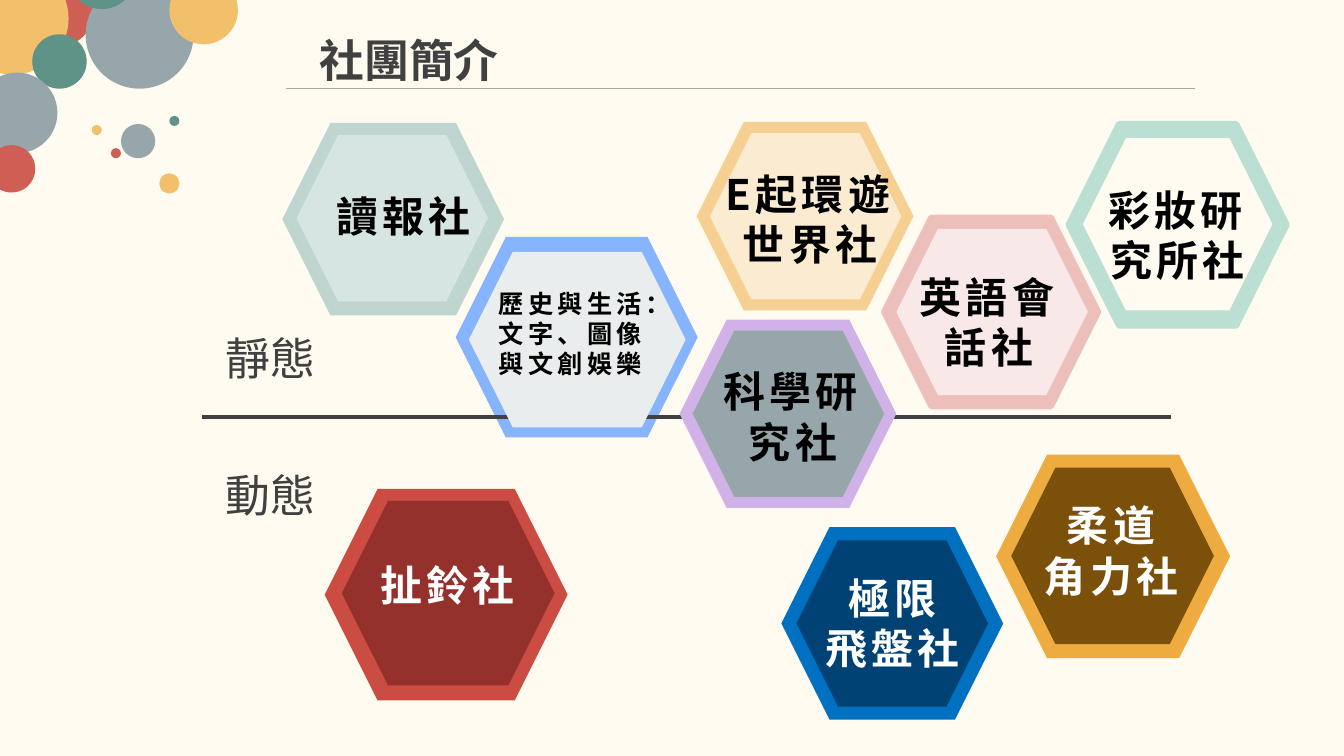
"""Build the school club overview slide."""
from dataclasses import dataclass
from typing import Optional

from lxml.etree import SubElement
from pptx import Presentation
from pptx.dml.color import RGBColor as RGB
from pptx.enum.shapes import MSO_CONNECTOR as CONN, MSO_SHAPE as SHAPE
from pptx.enum.text import MSO_AUTO_SIZE as FIT, PP_ALIGN as ALIGN
from pptx.oxml.ns import qn
from pptx.util import Emu, Pt

PX = 9144
FONT = "Noto Sans CJK SC"
COLORS = {
    "cream": "FFFBF0", "dark": "404040", "rule": "A6A6A6", "black": "000000", "white": "FFFFFF",
    "red": "CF5F55", "yellow": "F2C06B", "green": "5F9387", "gray": "97A6AB",
    "sage": "BED5D0", "pale_sage": "D7E5E2", "blue": "86B4FE", "mist": "EAEDEE",
    "pink": "ECBFBB", "pale_pink": "F8E9E8", "brick": "CA4C42", "maroon": "94312C",
    "azure": "0070C0", "navy": "004274", "amber": "EEAC40", "brown": "7B500B",
    "peach": "F6D092", "pale_peach": "FBEBD1", "mint": "BBDFD3", "lilac": "D1B2E8",
}


@dataclass(frozen=True)
class Bubble:
    x: int
    y: int
    size: int
    color: str


@dataclass(frozen=True)
class Hexagon:
    x: int
    y: int
    w: int
    h: int
    color: str
    border: float = 0


@dataclass(frozen=True)
class Label:
    x: int
    y: int
    w: int
    h: int
    text: str
    color: str = "black"
    size: int = 30
    bold: bool = True
    spacing: int = 300
    align: ALIGN = ALIGN.CENTER


@dataclass(frozen=True)
class Badge:
    rim: Optional[Hexagon]
    core: Hexagon
    label: Label


BUBBLES = [
    Bubble(4, -44, 93, "red"), Bubble(-43, -37, 111, "yellow"),
    Bubble(32, 34, 54, "green"), Bubble(-23, 72, 80, "gray"),
    Bubble(85, -19, 107, "gray"), Bubble(67, -59, 68, "green"),
    Bubble(-12, 144, 47, "red"), Bubble(120, 123, 34, "gray"),
    Bubble(110, 147, 10, "red"), Bubble(91, 124, 10, "yellow"),
    Bubble(168, 115, 10, "green"), Bubble(158, 172, 20, "yellow"),
    Bubble(168, -24, 68, "yellow"),
]
HEADINGS = [
    Label(307, 28, 229, 64, "社團簡介", "dark", 32, True, 0, ALIGN.JUSTIFY),
    Label(214, 323, 122, 64, "靜態", "dark", 32, False, 0, ALIGN.JUSTIFY),
    Label(214, 459, 122, 64, "動態", "dark", 32, False, 0, ALIGN.JUSTIFY),
]
HISTORY_RIM = Hexagon(452, 235, 240, 199, "blue")
BACK_BADGES = [
    Badge(Hexagon(280, 122, 220, 191, "sage"), Hexagon(294, 134, 190, 165, "pale_sage"),
          Label(318, 184, 164, 61, "讀報社")),
    Badge(Hexagon(877, 216, 212, 187, "pink", 4.5), Hexagon(889, 227, 190, 165, "pale_pink"),
          Label(897, 264, 168, 111, "英語會話社")),
    Badge(Hexagon(322, 485, 241, 210, "brick"), Hexagon(339, 497, 211, 183, "maroon"),
          Label(355, 550, 178, 61, "扯鈴社", "white")),
    Badge(Hexagon(775, 523, 220, 191, "azure"), Hexagon(790, 536, 190, 165, "navy"),
          Label(806, 563, 159, 111, "極限\n飛盤社", "white")),
    Badge(Hexagon(988, 451, 232, 202, "amber"), Hexagon(1003, 464, 201, 175, "brown"),
          Label(1018, 491, 168, 111, "柔道\n角力社", "white")),
    Badge(Hexagon(691, 121, 215, 187, "peach"), Hexagon(704, 132, 190, 165, "pale_peach"),
          Label(703, 162, 201, 111, "E起環遊世界社")),
]
FRONT_BADGES = [
    Badge(Hexagon(1060, 123, 216, 200, "mint", 4.5), Hexagon(1074, 137, 188, 171, "cream"),
          Label(1086, 178, 164, 111, "彩妝研究所社")),
    Badge(None, Hexagon(465, 250, 215, 174, "mist"),
          Label(485, 281, 180, 101, "歷史與生活：文字、圖像與文創娛樂", size=18, align=ALIGN.LEFT)),
    Badge(Hexagon(674, 317, 215, 187, "lilac"), Hexagon(687, 328, 190, 165, "gray"),
          Label(686, 358, 201, 111, "科學研究社")),
]


def px(*values: int) -> list[Emu]:
    return [Emu(v * PX) for v in values]


def rgb(name: str) -> RGB:
    return RGB.from_string(COLORS[name])


def paint(sp, color: str, border: float = 0) -> None:
    sp.shadow.inherit = False
    sp.fill.solid()
    sp.fill.fore_color.rgb = rgb(color)
    if border:
        sp.line.color.rgb = rgb(color)
        sp.line.width = Pt(border)
    else:
        sp.line.fill.background()


def draw_bubbles(s, bubbles: list[Bubble]) -> None:
    group = s.shapes.add_group_shape()
    for b in bubbles:
        paint(group.shapes.add_shape(SHAPE.OVAL, *px(b.x, b.y, b.size, b.size)), b.color)


def draw_hexagon(s, h: Hexagon) -> None:
    paint(s.shapes.add_shape(SHAPE.HEXAGON, *px(h.x, h.y, h.w, h.h)), h.color, h.border)


def draw_label(s, label: Label) -> None:
    tf = s.shapes.add_textbox(*px(label.x, label.y, label.w, label.h)).text_frame
    tf.word_wrap = True
    tf.auto_size = FIT.SHAPE_TO_FIT_TEXT
    tf.text = label.text
    for p in tf.paragraphs:
        p.alignment = label.align
        for r in p.runs:
            r.font.name = FONT
            r.font.size = Pt(label.size)
            r.font.bold = label.bold
            r.font.color.rgb = rgb(label.color)
            rpr = r.font._element
            SubElement(rpr, qn("a:ea")).set("typeface", FONT)
            if label.spacing:
                rpr.set("spc", str(label.spacing))


def draw_badge(s, badge: Badge) -> None:
    if badge.rim:
        draw_hexagon(s, badge.rim)
    draw_hexagon(s, badge.core)
    draw_label(s, badge.label)


def draw_rule(s, left: int, right: int, y: int, color: str, width: float) -> None:
    line = s.shapes.add_connector(CONN.STRAIGHT, *px(left, y, right, y))
    line.line.color.rgb = rgb(color)
    line.line.width = Pt(width)
    SubElement(line._element.spPr, qn("a:effectLst"))


def main() -> None:
    prs = Presentation()
    prs.slide_width, prs.slide_height = px(1333, 750)
    s = prs.slides.add_slide(prs.slide_layouts[6])
    s.background.fill.solid()
    s.background.fill.fore_color.rgb = rgb("cream")
    draw_bubbles(s, BUBBLES)
    draw_rule(s, 284, 1185, 88, "rule", 0.5)
    for heading in HEADINGS:
        draw_label(s, heading)
    draw_hexagon(s, HISTORY_RIM)
    for badge in BACK_BADGES:
        draw_badge(s, badge)
    draw_rule(s, 200, 1161, 414, "dark", 3)
    for badge in FRONT_BADGES:
        draw_badge(s, badge)
    prs.save("out.pptx")


if __name__ == "__main__":
    main()
